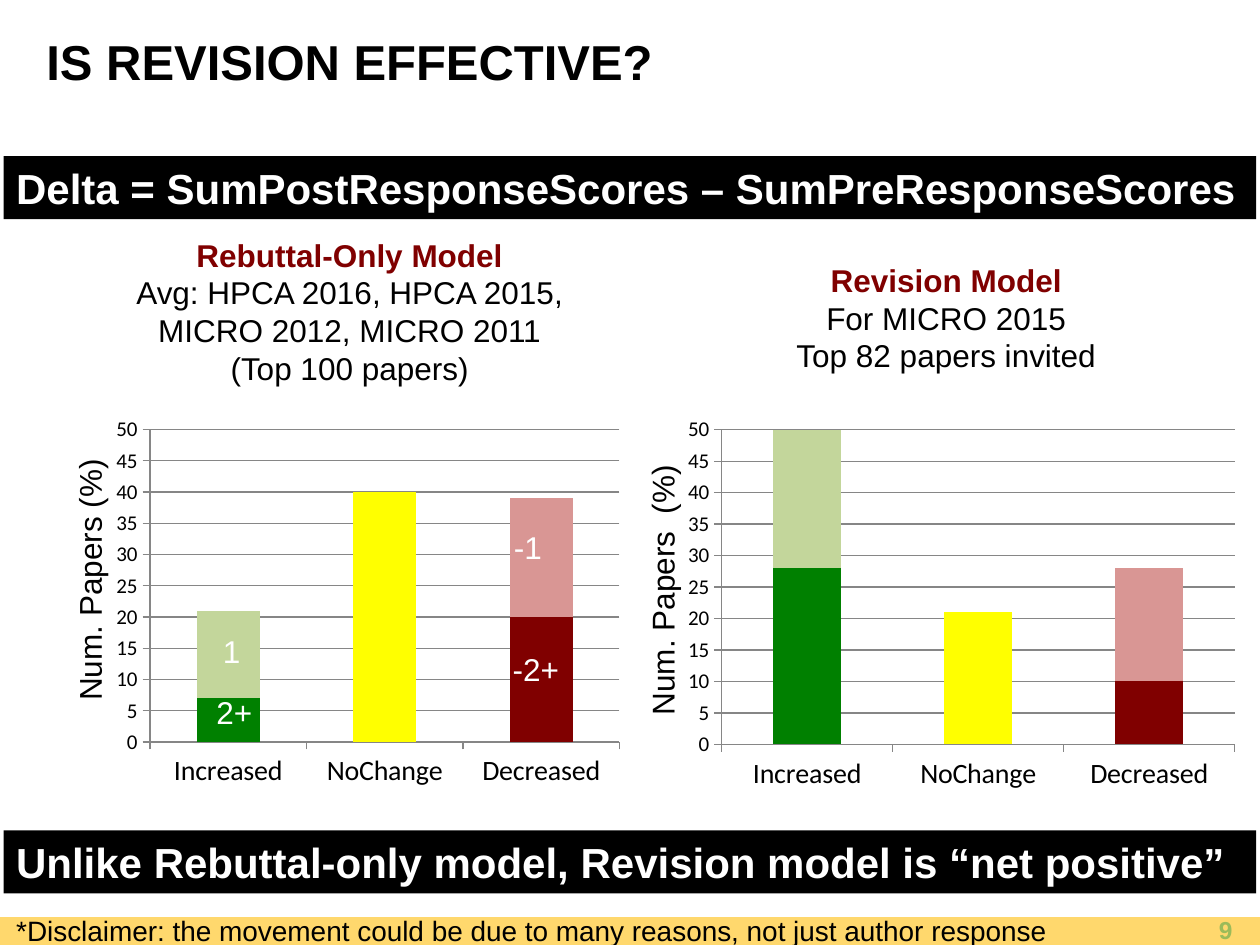
from dataclasses import dataclass

from pptx import Presentation
from pptx.chart.data import CategoryChartData
from pptx.dml.color import RGBColor
from pptx.enum import chart as charts, shapes, text
from pptx.util import Inches, Pt


@dataclass(frozen=True)
class Theme:
    font: str = "Arial"
    chart_font: str = "Calibri"
    black: str = "000000"
    white: str = "FFFFFF"
    maroon: str = "800000"
    rose: str = "D99694"
    green: str = "008000"
    pale_green: str = "C3D69B"
    yellow: str = "FFFF00"
    footer: str = "FFD86D"
    page_number: str = "9BBB59"
    grid: str = "868686"
    title_size: int = 28
    banner_size: int = 24
    body_size: int = 18
    note_size: int = 16
    page_size: int = 14
    category_size: int = 16
    value_size: int = 12


THEME = Theme()
CENTER, RIGHT = text.PP_ALIGN.CENTER, text.PP_ALIGN.RIGHT
MIDDLE = text.MSO_ANCHOR.MIDDLE


@dataclass(frozen=True)
class Box:
    left: float
    top: float
    width: float
    height: float

    def emu(self) -> tuple:
        return tuple(Inches(v) for v in (self.left, self.top, self.width, self.height))


@dataclass(frozen=True)
class Line:
    words: str
    size: int = THEME.body_size
    color: str = THEME.black
    bold: bool = False


@dataclass(frozen=True)
class Label:
    box: Box
    lines: tuple
    align: object = text.PP_ALIGN.LEFT
    anchor: object = text.MSO_ANCHOR.TOP
    rotation: int = 0
    wrap: bool = False


@dataclass(frozen=True)
class Stack:
    box: Box
    large_moves: tuple
    small_moves: tuple


def rgb(color: str) -> RGBColor:
    return RGBColor.from_string(color)


def write(frame, lines: tuple, align) -> None:
    for index, line in enumerate(lines):
        paragraph = frame.add_paragraph() if index else frame.paragraphs[0]
        paragraph.alignment = align
        run = paragraph.add_run()
        run.text = line.words
        run.font.name = THEME.font
        run.font.size = Pt(line.size)
        run.font.bold = line.bold
        run.font.color.rgb = rgb(line.color)


def add_label(slide, label: Label) -> None:
    shape = slide.shapes.add_textbox(*label.box.emu())
    shape.rotation = label.rotation
    frame = shape.text_frame
    frame.word_wrap = label.wrap
    frame.vertical_anchor = label.anchor
    write(frame, label.lines, label.align)


def add_band(slide, box: Box, color: str, lines: tuple = ()) -> None:
    """Draw a borderless full-width strip with optional text."""
    band = slide.shapes.add_shape(shapes.MSO_SHAPE.RECTANGLE, *box.emu())
    band.shadow.inherit = False
    band.fill.solid()
    band.fill.fore_color.rgb = rgb(color)
    band.line.fill.background()
    band.text_frame.word_wrap = False
    band.text_frame.vertical_anchor = MIDDLE
    write(band.text_frame, lines, text.PP_ALIGN.LEFT)


def style_axis(axis, size: int) -> None:
    axis.major_tick_mark = charts.XL_TICK_MARK.OUTSIDE
    axis.minor_tick_mark = charts.XL_TICK_MARK.NONE
    axis.format.line.color.rgb = rgb(THEME.grid)
    axis.tick_labels.font.size = Pt(size)


def add_stack(slide, stack: Stack) -> None:
    data = CategoryChartData()
    data.categories = ("Increased", "NoChange", "Decreased")
    data.add_series("Series 1", stack.large_moves)
    data.add_series("Series 2", stack.small_moves)
    chart = slide.shapes.add_chart(
        charts.XL_CHART_TYPE.COLUMN_STACKED, *stack.box.emu(), data).chart
    chart.has_legend = False
    chart.has_title = False
    chart.font.name = THEME.chart_font
    chart.font.size = Pt(10)
    chart.font.color.rgb = rgb(THEME.black)
    style_axis(chart.category_axis, THEME.category_size)
    values = chart.value_axis
    style_axis(values, THEME.value_size)
    values.minimum_scale, values.maximum_scale, values.major_unit = 0, 50, 5
    values.has_major_gridlines = True
    values.major_gridlines.format.line.color.rgb = rgb(THEME.grid)
    plot = chart.plots[0]
    plot.gap_width, plot.overlap = 150, 100
    plot.vary_by_categories = False
    palettes = ((THEME.green, THEME.yellow, THEME.maroon),
                (THEME.pale_green, THEME.yellow, THEME.rose))
    for series, palette in zip(plot.series, palettes):
        series.invert_if_negative = False
        for index, color in enumerate(palette):
            fill = series.points[index].format.fill
            fill.solid()
            fill.fore_color.rgb = rgb(color)


def model_heading(box: Box, name: str, *details: str, wrap: bool = False) -> Label:
    heading = Line(name, color=THEME.maroon, bold=True)
    return Label(box, (heading, *map(Line, details)), CENTER, wrap=wrap)


def bar_label(left: float, top: float, width: float, words: str) -> Label:
    return Label(Box(left, top, width, 0.4), (Line(words, color=THEME.white),))


def banner_line(words: str) -> tuple:
    return (Line(words, THEME.banner_size, THEME.white, True),)


STACKS = (
    Stack(Box(5.37, 3.25, 4.52, 3.09), (28, 21, 10), (23, 0, 18)),
    Stack(Box(0.84, 3.25, 4.16, 3.07), (7, 40, 20), (14, 0, 19)),
)
BANNERS = (
    (6.59, "Unlike Rebuttal-only model, Revision model is “net positive”"),
    (1.24, "Delta = SumPostResponseScores – SumPreResponseScores"),
)
LABELS = (
    Label(Box(0.27, 0.22, 9.17, 0.53),
          (Line("IS REVISION EFFECTIVE?", THEME.title_size, bold=True),), anchor=MIDDLE, wrap=True),
    Label(Box(7.55, 7.25, 2.33, 0.26),
          (Line("9", THEME.page_size, THEME.page_number, True),), RIGHT, MIDDLE, wrap=True),
    model_heading(Box(6.21, 2.02, 2.6, 1.01), "Revision Model",
                  "For MICRO 2015", "Top 82 papers invited"),
    model_heading(Box(0.59, 1.82, 4.37, 1.31), "Rebuttal-Only Model",
                  "Avg: HPCA 2016, HPCA 2015,", "MICRO 2012, MICRO 2011",
                  "(Top 100 papers)", wrap=True),
    Label(Box(4.15, 4.47, 2.21, 0.4), (Line("Num. Papers  (%)"),), rotation=270),
    Label(Box(-0.36, 4.39, 2.14, 0.4), (Line("Num. Papers (%)"),), rotation=270),
    bar_label(1.62, 5.45, 0.5, "2+"),
    bar_label(1.67, 4.97, 0.34, "1"),
    bar_label(3.98, 4.14, 0.43, "-1"),
    bar_label(3.97, 5.11, 0.58, "-2+"),
    Label(Box(0.03, 7.2, 8.48, 0.37),
          (Line("*Disclaimer: the movement could be due to many reasons, "
                "not just author response", THEME.note_size),)),
)


def main() -> None:
    deck = Presentation()
    deck.slide_width, deck.slide_height = Inches(10), Inches(7.5)
    slide = deck.slides.add_slide(deck.slide_layouts[6])
    add_band(slide, Box(0, 7.28, 10, 0.23), THEME.footer)
    for stack in STACKS:
        add_stack(slide, stack)
    for top, words in BANNERS:
        add_band(slide, Box(0.03, top, 9.94, 0.5), THEME.black, banner_line(words))
    for label in LABELS:
        add_label(slide, label)
    deck.save("out.pptx")


if __name__ == "__main__":
    main()
